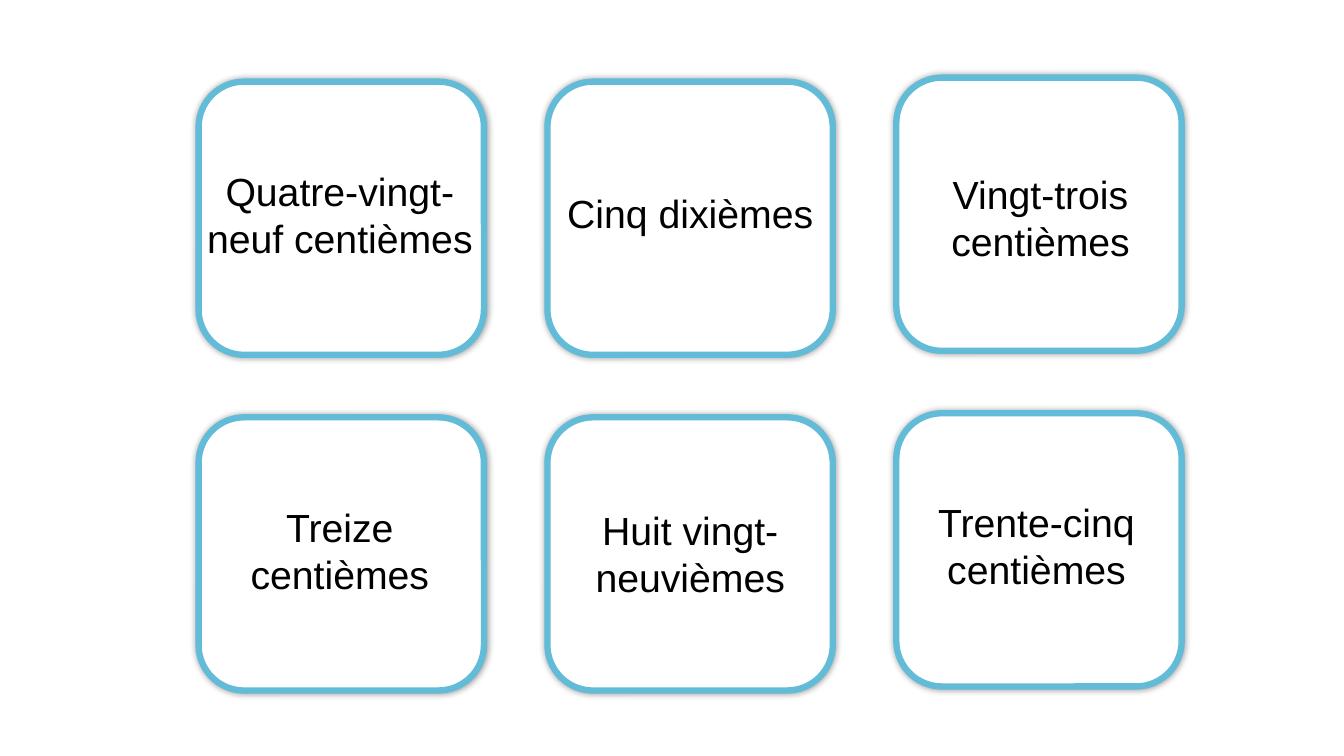
import pptx
import pptx.util
import pptx.dml.color
import pptx.enum.shapes
import pptx.enum.text
import pptx.oxml
import pptx.oxml.ns

PX = 9144
COLORS = {"card": "FFFFFF", "border": "62BCD7", "text": "000000", "shadow": "000000"}
CARD_W, CARD_H = 283, 271
LEFT, TOP = 197, 81
COL_STEP, ROW_STEP = 346, 333
LAST_COL_LIFT = 4
LABELS = [
    ("Quatre-vingt-neuf centièmes", 194, 161, 286, 104),
    ("Cinq dixièmes", 543, 183, 283, 57),
    ("Vingt-trois centièmes", 889, 164, 286, 104),
    ("Treize centièmes", 192, 494, 290, 104),
    ("Huit vingt-neuvièmes", 532, 497, 305, 104),
    ("Trente-cinq centièmes", 885, 489, 286, 104),
]


def rgb(name):
    return pptx.dml.color.RGBColor.from_string(COLORS[name])


def write(tf, text, size=28, font="Arial", color="text",
          align=pptx.enum.text.PP_ALIGN.CENTER):
    p = tf.paragraphs[0]
    p.alignment = align
    r = p.add_run()
    r.text = text
    r.font.size = pptx.util.Pt(size)
    r.font.name = font
    r.font.color.rgb = rgb(color)


class Deck:
    """Builds slides of bordered cards and centred labels, measured in px."""

    def __init__(self, width, height):
        self.prs = pptx.Presentation()
        self.prs.slide_width = width * PX
        self.prs.slide_height = height * PX
        self.s = self.prs.slides.add_slide(self.prs.slide_layouts[6])

    def card(self, x, y, w, h):
        sp = self.s.shapes.add_shape(
            pptx.enum.shapes.MSO_SHAPE.ROUNDED_RECTANGLE, x * PX, y * PX, w * PX, h * PX)
        sp.fill.solid()
        sp.fill.fore_color.rgb = rgb("card")
        sp.line.color.rgb = rgb("border")
        sp.line.width = pptx.util.Pt(4.5)
        self.glow(sp)

    def glow(self, sp, blur=5, alpha=40):
        sp.shadow.inherit = False
        effects = sp._element.spPr.find(pptx.oxml.ns.qn("a:effectLst"))
        effects.append(pptx.oxml.parse_xml(
            f'<a:outerShdw {pptx.oxml.ns.nsdecls("a")} blurRad="{pptx.util.Pt(blur)}" '
            f'dist="0" dir="0" algn="ctr" rotWithShape="0">'
            f'<a:srgbClr val="{COLORS["shadow"]}"><a:alpha val="{alpha * 1000}"/></a:srgbClr>'
            f'</a:outerShdw>'))

    def label(self, text, x, y, w, h):
        tf = self.s.shapes.add_textbox(x * PX, y * PX, w * PX, h * PX).text_frame
        tf.word_wrap = True
        tf.auto_size = pptx.enum.text.MSO_AUTO_SIZE.SHAPE_TO_FIT_TEXT
        write(tf, text)


def main():
    deck = Deck(1333, 750)
    for row in range(2):
        for col in range(3):
            lift = LAST_COL_LIFT if col == 2 else 0
            deck.card(LEFT + col * COL_STEP, TOP + row * ROW_STEP - lift, CARD_W, CARD_H)
    for label in LABELS:
        deck.label(*label)
    deck.prs.save("out.pptx")


if __name__ == "__main__":
    main()
